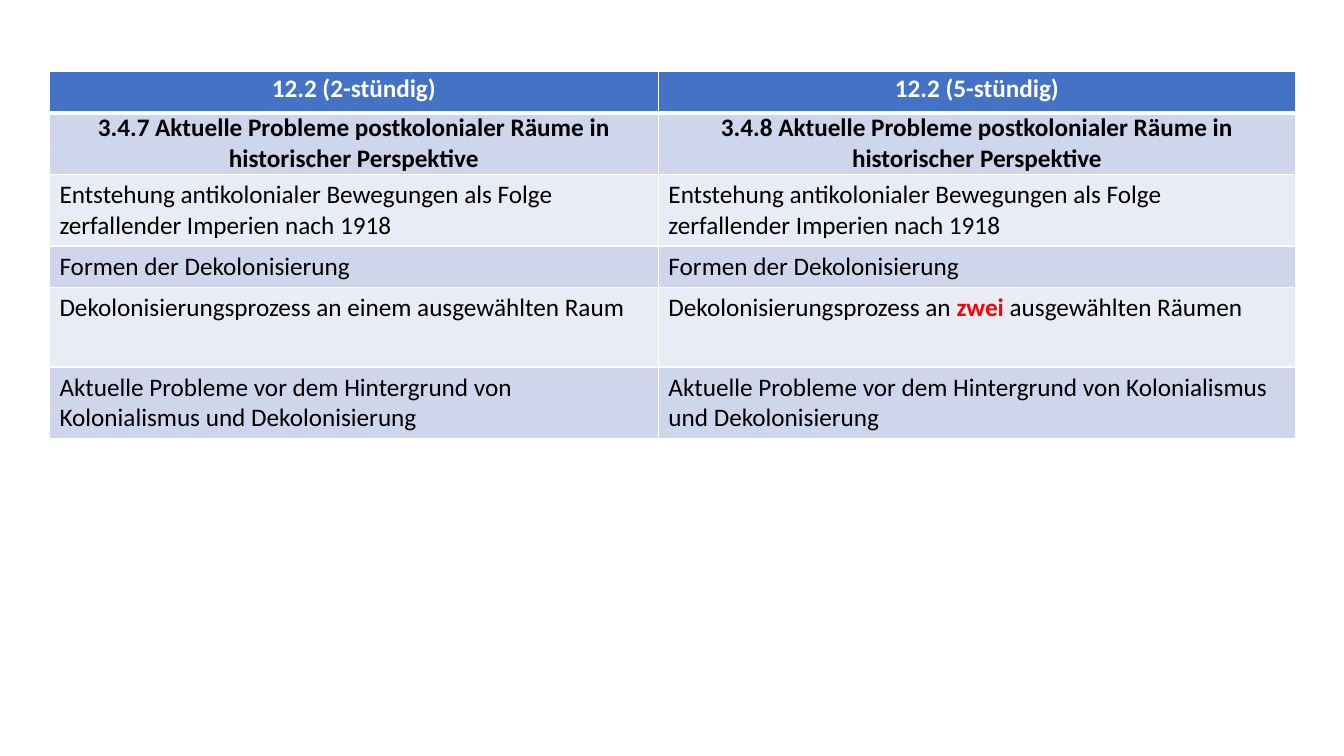
from dataclasses import dataclass

from pptx import Presentation
from pptx.dml.color import RGBColor
from pptx.enum.text import MSO_ANCHOR, PP_ALIGN
from pptx.oxml import parse_xml
from pptx.oxml.ns import nsdecls
from pptx.util import Inches, Pt

TOP = MSO_ANCHOR.TOP
LEFT, CENTER = PP_ALIGN.LEFT, PP_ALIGN.CENTER


@dataclass(frozen=True)
class Theme:
    font: str = "Calibri"
    size: int = 18
    header: str = "4472C4"
    bands: tuple = ("E9EBF5", "CFD5EA")
    ink: str = "000000"
    white: str = "FFFFFF"
    accent: str = "FF0000"
    line: int = 1
    header_line: int = 3


THEME = Theme()
PAGE_WIDTH, PAGE_HEIGHT = 13.33, 7.5
TABLE_LEFT, TABLE_TOP = 0.49, 0.71
COLUMN_WIDTHS = (6.04, 6.32)
ROW_HEIGHTS = (0.41, 0.61, 0.71, 0.41, 0.79, 0.71)
TITLE_ROWS = 2

# Each cell is a list of (text, emphasised) spans
UPRISING = [("Entstehung antikolonialer Bewegungen als Folge "
             "zerfallender Imperien nach 1918", False)]
FORMS = [("Formen der Dekolonisierung", False)]
PROBLEMS = [("Aktuelle Probleme vor dem Hintergrund von "
             "Kolonialismus und Dekolonisierung", False)]
TOPIC = "Aktuelle Probleme postkolonialer Räume in historischer Perspektive"
CURRICULUM = [
    [[("12.2 (2-stündig)", False)], [("12.2 (5-stündig)", False)]],
    [[(f"3.4.7 {TOPIC}", False)], [(f"3.4.8 {TOPIC}", False)]],
    [UPRISING, UPRISING],
    [FORMS, FORMS],
    [[("Dekolonisierungsprozess an einem ausgewählten Raum", False)],
     [("Dekolonisierungsprozess an ", False), ("zwei", True),
      (" ausgewählten Räumen", False)]],
    [PROBLEMS, PROBLEMS],
]


def rgb(value):
    return RGBColor.from_string(value)


def set_borders(cell, top, bottom):
    """Put white lines on all four sides; widths in points."""
    properties = cell._tc.get_or_add_tcPr()
    widths = {"lnL": THEME.line, "lnR": THEME.line, "lnT": top, "lnB": bottom}
    # Borders come before the fill in the schema order
    for position, (side, width) in enumerate(widths.items()):
        properties.insert(position, parse_xml(
            f'<a:{side} {nsdecls("a")} w="{Pt(width)}"><a:solidFill>'
            f'<a:srgbClr val="{THEME.white}"/></a:solidFill></a:{side}>'))


def write_spans(cell, spans, row):
    is_title = row < TITLE_ROWS
    para = cell.text_frame.paragraphs[0]
    para.alignment = CENTER if is_title else LEFT
    para.space_before = para.space_after = Pt(3 if row == 1 else 6)
    para.line_spacing = 1.07 if row == 0 else 1.0
    para.font.name = THEME.font
    para.font.size = Pt(THEME.size)
    for text, emphasised in spans:
        span = para.add_run()
        span.text = text
        span.font.bold = is_title or emphasised
        color = THEME.white if row == 0 else THEME.ink
        span.font.color.rgb = rgb(THEME.accent if emphasised else color)


def format_cell(cell, row):
    cell.vertical_anchor = TOP
    is_title = row < TITLE_ROWS
    cell.margin_left = cell.margin_right = Inches(0.07 if is_title else 0.1)
    cell.margin_top = cell.margin_bottom = Inches(0 if is_title else 0.05)
    cell.fill.solid()
    cell.fill.fore_color.rgb = rgb(THEME.bands[row % 2] if row else THEME.header)
    set_borders(cell,
                top=THEME.header_line if row == 1 else THEME.line,
                bottom=THEME.header_line if row == 0 else THEME.line)


def add_curriculum_table(page):
    frame = page.shapes.add_table(
        len(ROW_HEIGHTS), len(COLUMN_WIDTHS), Inches(TABLE_LEFT), Inches(TABLE_TOP),
        Inches(sum(COLUMN_WIDTHS)), Inches(sum(ROW_HEIGHTS)))
    table = frame.table
    for column, width in zip(table.columns, COLUMN_WIDTHS):
        column.width = Inches(width)
    for row, height in enumerate(ROW_HEIGHTS):
        table.rows[row].height = Inches(height)
        for column, spans in enumerate(CURRICULUM[row]):
            cell = table.cell(row, column)
            format_cell(cell, row)
            write_spans(cell, spans, row)


def main():
    deck = Presentation()
    deck.slide_width = Inches(PAGE_WIDTH)
    deck.slide_height = Inches(PAGE_HEIGHT)
    page = deck.slides.add_slide(deck.slide_layouts[6])
    add_curriculum_table(page)
    deck.save("out.pptx")


if __name__ == "__main__":
    main()
